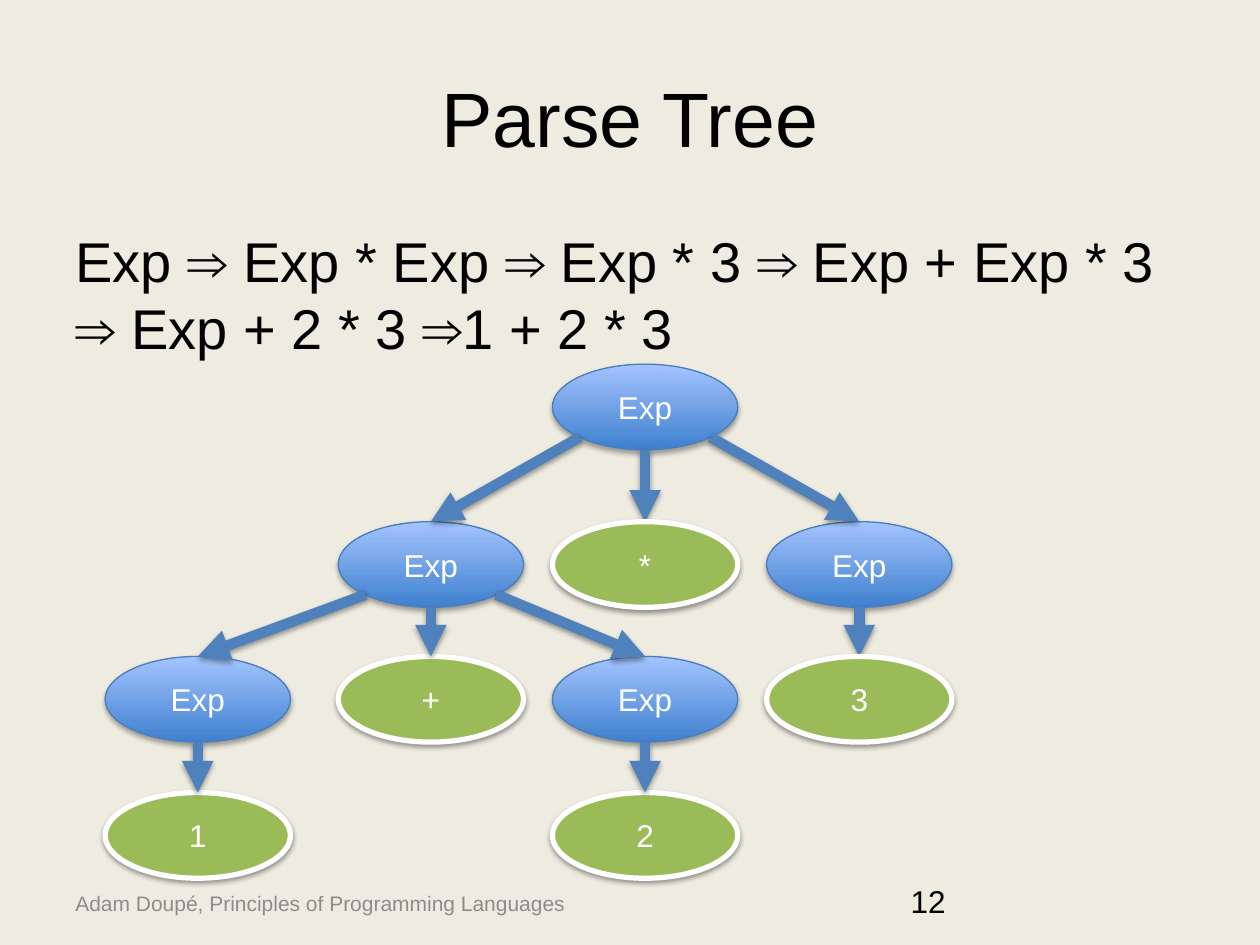
"""Build the "Parse Tree" slide: a derivation and its parse tree."""
from lxml.etree import SubElement
from pptx import Presentation
from pptx.dml.color import RGBColor
from pptx.enum.shapes import MSO_CONNECTOR, MSO_SHAPE
from pptx.enum.text import MSO_ANCHOR as ANCHOR, PP_ALIGN as ALIGN
from pptx.oxml.ns import qn
from pptx.util import Inches, Pt

BLACK = RGBColor(0x00, 0x00, 0x00)
WHITE = RGBColor(0xFF, 0xFF, 0xFF)
GRAY = RGBColor(0x8C, 0x8C, 0x8C)
CREAM = RGBColor(0xEE, 0xEC, 0xE1)
BLUE_DARK = RGBColor(0x3F, 0x80, 0xCE)
BLUE_LIGHT = RGBColor(0xA4, 0xC4, 0xFF)
BLUE_EDGE = RGBColor(0x4B, 0x7E, 0xBC)
ARROW = RGBColor(0x4F, 0x81, 0xBD)
GREEN = RGBColor(0x9B, 0xBB, 0x59)

NODE_W, NODE_H = 1.47, 0.68
COLS = [1.57, 3.42, 5.12, 6.82]
ROWS = [2.89, 4.14, 5.21, 6.29]
EXPS = [(2, 0), (1, 1), (3, 1), (0, 2), (2, 2)]
TOKENS = {(2, 1): "*", (3, 2): "3", (1, 2): "+", (2, 3): "2", (0, 3): "1"}
EDGES_BEHIND = [((2, 0), (1, 1)), ((2, 0), (3, 1)), ((2, 0), (2, 1)), ((3, 1), (3, 2))]
EDGES_FRONT = [((1, 1), (1, 2)), ((1, 1), (2, 2)), ((1, 1), (0, 2)),
               ((0, 2), (0, 3)), ((2, 2), (2, 3))]


def write(shape, text, size, color, align=ALIGN.LEFT, anchor=ANCHOR.TOP):
    tf = shape.text_frame
    tf.word_wrap = True
    tf.vertical_anchor = anchor
    p = tf.paragraphs[0]
    p.alignment = align
    r = p.add_run()
    r.text = text
    r.font.name = "Arial"
    r.font.size = Pt(size)
    r.font.color.rgb = color


def add_shadow(sp_pr, distance, alpha):
    effects = sp_pr.find(qn("a:effectLst"))
    if effects is None:
        effects = SubElement(sp_pr, qn("a:effectLst"))
    shadow = SubElement(effects, qn("a:outerShdw"), blurRad=str(Pt(3.1)),
                        dist=str(Pt(distance)), dir="5400000", rotWithShape="0")
    color = SubElement(shadow, qn("a:srgbClr"), val="000000")
    SubElement(color, qn("a:alpha"), val=str(alpha * 1000))


prs = Presentation()
prs.slide_width, prs.slide_height = Inches(10), Inches(7.5)
s = prs.slides.add_slide(prs.slide_layouts[5])
s.background.fill.solid()
s.background.fill.fore_color.rgb = CREAM

title = s.shapes.title
title.left, title.top = Inches(0.5), Inches(0.3)
title.width, title.height = Inches(9), Inches(1.25)
write(title, "Parse Tree", 44, BLACK, ALIGN.CENTER, ANCHOR.MIDDLE)

for text, x, y, w, h, size, color, anchor in [
    ("Exp ⇒ Exp * Exp ⇒ Exp * 3 ⇒ Exp + Exp * 3 ⇒ Exp + 2 * 3 ⇒1 + 2 * 3",
     0.5, 1.75, 9, 1.14, 32, BLACK, ANCHOR.TOP),
    ("Adam Doupé, Principles of Programming Languages",
     0.5, 6.97, 4.26, 0.4, 12, GRAY, ANCHOR.MIDDLE),
    ("12", 7.13, 6.95, 2.33, 0.4, 18, BLACK, ANCHOR.TOP),
]:
    box = s.shapes.add_textbox(Inches(x), Inches(y), Inches(w), Inches(h))
    write(box, text, size, color, anchor=anchor)

exps = [(node, "Exp") for node in EXPS]
for nodes, edges in [(exps, EDGES_BEHIND), (TOKENS.items(), EDGES_FRONT)]:
    for (col, row), text in nodes:
        sp = s.shapes.add_shape(MSO_SHAPE.OVAL, Inches(COLS[col] - NODE_W / 2),
                                Inches(ROWS[row]), Inches(NODE_W), Inches(NODE_H))
        sp.shadow.inherit = False
        if text == "Exp":
            sp.fill.gradient()
            sp.fill.gradient_angle = 90
            for stop, color in zip(sp.fill.gradient_stops, (BLUE_DARK, BLUE_LIGHT)):
                stop.color.rgb = color
            sp.line.color.rgb, sp.line.width = BLUE_EDGE, Pt(0.75)
            add_shadow(sp.element.spPr, 1.8, 35)
        else:
            sp.fill.solid()
            sp.fill.fore_color.rgb = GREEN
            sp.line.color.rgb, sp.line.width = WHITE, Pt(3)
            add_shadow(sp.element.spPr, 1.6, 38)
        write(sp, text, 18, WHITE, ALIGN.CENTER, ANCHOR.MIDDLE)

    for (col, row), (child_col, child_row) in edges:
        side = (child_col > col) - (child_col < col)
        x = COLS[col] + side * 0.52
        y = ROWS[row] + (0.58 if side else NODE_H)
        line = s.shapes.add_connector(MSO_CONNECTOR.STRAIGHT, Inches(x), Inches(y),
                                      Inches(COLS[child_col]), Inches(ROWS[child_row]))
        line.line.color.rgb, line.line.width = ARROW, Pt(6)
        SubElement(line.line._get_or_add_ln(), qn("a:tailEnd"), type="triangle")
        add_shadow(line.element.spPr, 1.6, 38)

prs.save("out.pptx")
